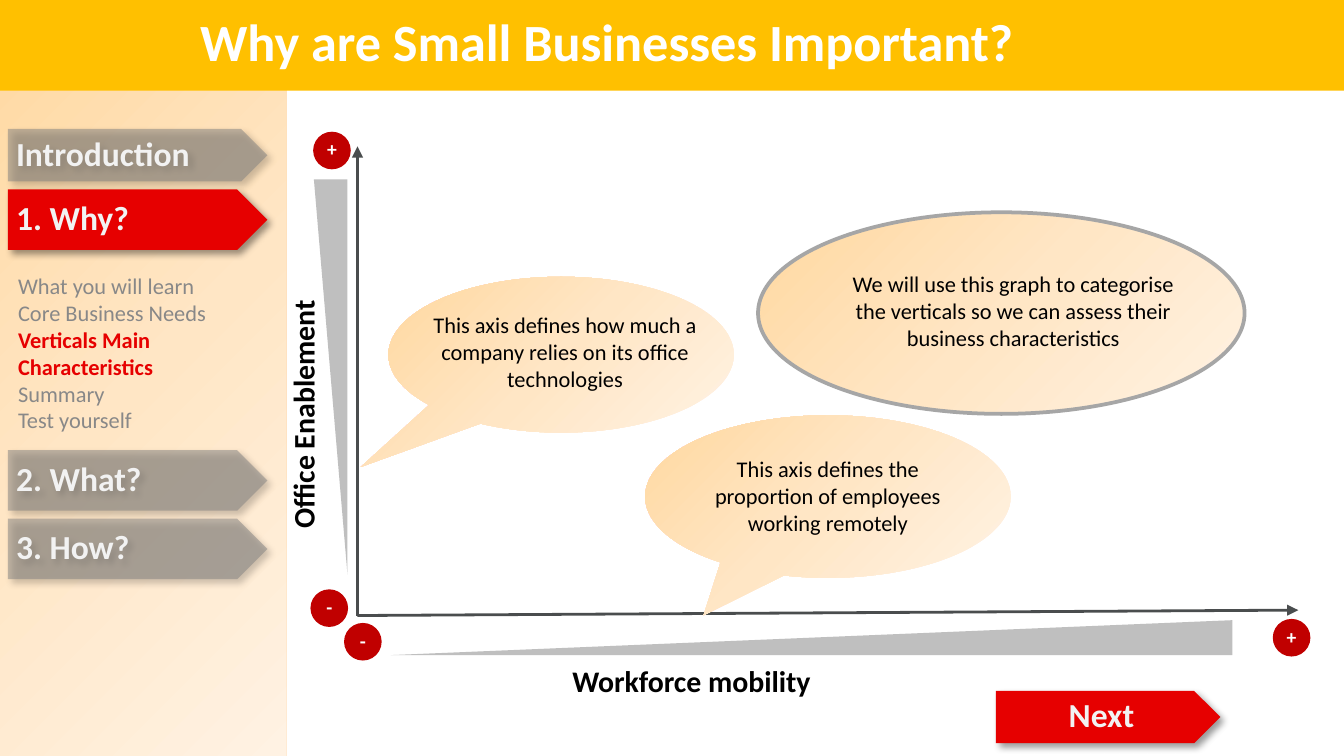
from lxml.etree import SubElement
from pptx import Presentation
from pptx.dml.color import RGBColor
from pptx.enum.shapes import MSO_CONNECTOR, MSO_SHAPE
from pptx.enum.text import MSO_ANCHOR, MSO_AUTO_SIZE, PP_ALIGN
from pptx.oxml import parse_xml
from pptx.oxml.ns import nsdecls, qn
from pptx.util import Pt

PX = 4572
AMBER = RGBColor(0xFF, 0xC0, 0x00)
RED = RGBColor(0xE6, 0x00, 0x00)
DARK_RED = RGBColor(0xC0, 0x00, 0x00)
GREY = RGBColor(0x80, 0x80, 0x80)
MENU_GREY = RGBColor(0x88, 0x88, 0x88)
WEDGE_GREY = RGBColor(0xBF, 0xBF, 0xBF)
RING_GREY = RGBColor(0xA6, 0xA6, 0xA6)
AXIS = RGBColor(0x4A, 0x4D, 0x4E)
BLACK = RGBColor(0, 0, 0)
WHITE = RGBColor(0xFF, 0xFF, 0xFF)
OFF_WHITE = RGBColor(0xF2, 0xF2, 0xF2)
PEACH = ((0, RGBColor(0xFF, 0xD8, 0xA0)), (50, RGBColor(0xFF, 0xE6, 0xC5)),
         (100, RGBColor(0xFF, 0xF2, 0xE3)))
LINEAR = '<a:lin ang="2700000" scaled="0"/>'
RADIAL = '<a:path path="circle"><a:fillToRect r="100000" b="100000"/></a:path>'


def write(sp, text, size=12, color=BLACK, bold=False, align=PP_ALIGN.LEFT,
          anchor=MSO_ANCHOR.TOP, inset=(0, 0, 0, 0), spacing=None, wrap=True,
          active=None):
    """Write one paragraph per line, with the active line in bold red."""
    tf = sp.text_frame
    tf.word_wrap = wrap
    tf.vertical_anchor = anchor
    tf.margin_left, tf.margin_top, tf.margin_right, tf.margin_bottom = (
        v * PX for v in inset)
    for i, line in enumerate(text.split("\n")):
        p = tf.add_paragraph() if i else tf.paragraphs[0]
        p.alignment = align
        if spacing:
            p.line_spacing = spacing
        r = p.add_run()
        r.text = line
        r.font.name = "Calibri"
        r.font.size = Pt(size)
        r.font.bold = bold or line == active
        r.font.color.rgb = RED if line == active else color


def textbox(s, x, y, w, h, text, **fmt):
    """Add a text box and write its text."""
    sp = s.shapes.add_textbox(x * PX, y * PX, w * PX, h * PX)
    write(sp, text, **fmt)
    return sp


def shape(s, kind, x, y, w, h, fill=None, gradient=None):
    """Add an unlined preset shape with a solid or peach gradient fill."""
    sp = s.shapes.add_shape(kind, x * PX, y * PX, w * PX, h * PX)
    sp.shadow.inherit = False
    sp.line.fill.background()
    if gradient:
        stops = "".join(f'<a:gs pos="{pos * 1000}"><a:srgbClr val="{c}"/></a:gs>'
                        for pos, c in PEACH)
        sp.fill.background()
        pr = sp._element.spPr
        pr.replace(pr.find(qn("a:noFill")), parse_xml(
            f'<a:gradFill {nsdecls("a")} rotWithShape="1"><a:gsLst>{stops}'
            f'</a:gsLst>{gradient}</a:gradFill>'))
    else:
        sp.fill.solid()
        sp.fill.fore_color.rgb = fill
    return sp


def button(s, x, y, w, h, text, fill=RED, alpha=None, align=PP_ALIGN.LEFT, left=12):
    """Add a shadowed arrow button, translucent when alpha is given."""
    sp = shape(s, MSO_SHAPE.PENTAGON, x, y, w, h, fill)
    pr = sp._element.spPr
    if alpha:
        color = pr.find(qn("a:solidFill")).find(qn("a:srgbClr"))
        SubElement(color, qn("a:alpha")).set("val", str(alpha * 1000))
    pr.find(qn("a:effectLst")).append(parse_xml(
        f'<a:outerShdw {nsdecls("a")} blurRad="{Pt(4)}" dist="{Pt(3)}" '
        'dir="2700000" algn="tl" rotWithShape="0"><a:srgbClr val="000000">'
        '<a:alpha val="40000"/></a:srgbClr></a:outerShdw>'))
    write(sp, text, size=18, color=OFF_WHITE, bold=True, align=align,
          anchor=MSO_ANCHOR.MIDDLE, inset=(left, 2, 2, 2), spacing=0.9)


def sign(s, x, y, text):
    """Add a round plus or minus marker."""
    sp = shape(s, MSO_SHAPE.OVAL, x, y, 56, 56, DARK_RED)
    write(sp, text, size=10.5, color=WHITE, bold=True, align=PP_ALIGN.CENTER,
          anchor=MSO_ANCHOR.MIDDLE, inset=(2, 2, 2, 2), spacing=0.9)


def wedge(s, x, y, w, h, rotation=0):
    """Add a grey wedge that grows towards its right end."""
    sp = shape(s, MSO_SHAPE.RIGHT_TRIANGLE, x, y, w, h, WEDGE_GREY)
    sp._element.spPr.find(qn("a:xfrm")).set("flipH", "1")
    sp.rotation = rotation


def arrow(s, x1, y1, x2, y2):
    """Add an axis line with an arrowhead at its end."""
    c = s.shapes.add_connector(MSO_CONNECTOR.STRAIGHT,
                               x1 * PX, y1 * PX, x2 * PX, y2 * PX)
    c.line.color.rgb = AXIS
    c.line.width = Pt(1.5)
    SubElement(c.line._get_or_add_ln(), qn("a:tailEnd")).set("type", "triangle")
    SubElement(c._element.spPr, qn("a:effectLst"))


def axis_title(s, x, y, w, h, text, rotation=0):
    """Add a bold axis title."""
    sp = textbox(s, x, y, w, h, text, size=16, bold=True, wrap=False,
                 inset=(20, 10, 20, 10))
    sp.text_frame.auto_size = MSO_AUTO_SIZE.SHAPE_TO_FIT_TEXT
    sp.rotation = rotation


def callout(s, x, y, w, h, tip, label, text):
    """Add a speech bubble with its tip and a label box inside it."""
    sp = shape(s, MSO_SHAPE.OVAL_CALLOUT, x, y, w, h, gradient=RADIAL)
    sp.adjustments[0], sp.adjustments[1] = tip
    dx, dy, lw, lh = label
    textbox(s, x + dx, y + dy, lw, lh, text, align=PP_ALIGN.CENTER,
            anchor=MSO_ANCHOR.MIDDLE, inset=(20, 10, 20, 10))


def summary(s, x, y, w, h, text):
    """Add the ringed ellipse that explains the graph."""
    sp = shape(s, MSO_SHAPE.OVAL, x, y, w, h, gradient=RADIAL)
    sp.line.color.rgb = RING_GREY
    sp.line.width = Pt(2)
    textbox(s, x + 128, y + 86, 504, 148, text, align=PP_ALIGN.CENTER)


def graph(s, x, y, w, h):
    """Draw the two axes, their wedges, markers, titles and bubbles."""
    base = y + h
    wedge(s, x + 50, base + 7, 1252, 52)
    wedge(s, x - 334, y + 318, 588, 50, 270)
    arrow(s, x, base, x, y)
    arrow(s, x, base, x + w, base - 8)
    for dx, dy, text in ((-66, -h - 22, "+"), (-70, -39, "-"),
                         (-20, 11, "-"), (w - 38, 5, "+")):
        sign(s, x + dx, base + dy, text)
    axis_title(s, x + 300, base + 61, 446, 74, "Workforce mobility")
    axis_title(s, x - 298, y + 334, 434, 74, "Office Enablement", 270)
    callout(s, x + 428, y + 400, 544, 242, (-0.34, 0.73), (70, 44, 404, 152),
            "This axis defines the proportion of employees working remotely")
    callout(s, x + 46, y + 194, 514, 232, (-0.58, 0.72), (46, 20, 434, 182),
            "This axis defines how much a company relies on its office technologies")
    summary(s, x + 596, y + 98, 724, 300,
            "We will use this graph to categorise the verticals "
            "so we can assess their business characteristics")


def sidebar(s, x, y, w, h):
    """Draw the navigation panel with its buttons and current submenu."""
    shape(s, MSO_SHAPE.RECTANGLE, x, y, w, h, gradient=LINEAR)
    for dy, bh, text in ((192, 78, "Introduction"), (282, 90, "1. Why?"),
                         (670, 90, "2. What?"), (772, 90, "3. How?")):
        style = {} if text == "1. Why?" else {"fill": GREY, "alpha": 50}
        button(s, x + 12, y + dy, 386, bh, text, **style)
    textbox(s, x + 27, y + 405, 392, h - 405,
            "What you will learn\nCore Business Needs\n"
            "Verticals Main Characteristics\nSummary\nTest yourself",
            color=MENU_GREY, active="Verticals Main Characteristics")


def header(s, x, y, w, h):
    """Draw the title band."""
    shape(s, MSO_SHAPE.RECTANGLE, x, y, w, h, AMBER)
    textbox(s, x + 298, y - 6, 1428, 134, "Why are Small Businesses Important?",
            size=28, color=WHITE, bold=True, anchor=MSO_ANCHOR.MIDDLE)


def main():
    """Build the slide and save it."""
    prs = Presentation()
    prs.slide_width, prs.slide_height = 2000 * PX, 1125 * PX
    s = prs.slides.add_slide(prs.slide_layouts[6])
    sidebar(s, 0, 0, 426, 1125)
    header(s, 0, 0, 2000, 135)
    graph(s, 532, 218, 1400, 698)
    button(s, 1482, 1028, 334, 78, "Next", align=PP_ALIGN.CENTER, left=2)
    prs.save("out.pptx")


if __name__ == "__main__":
    main()
